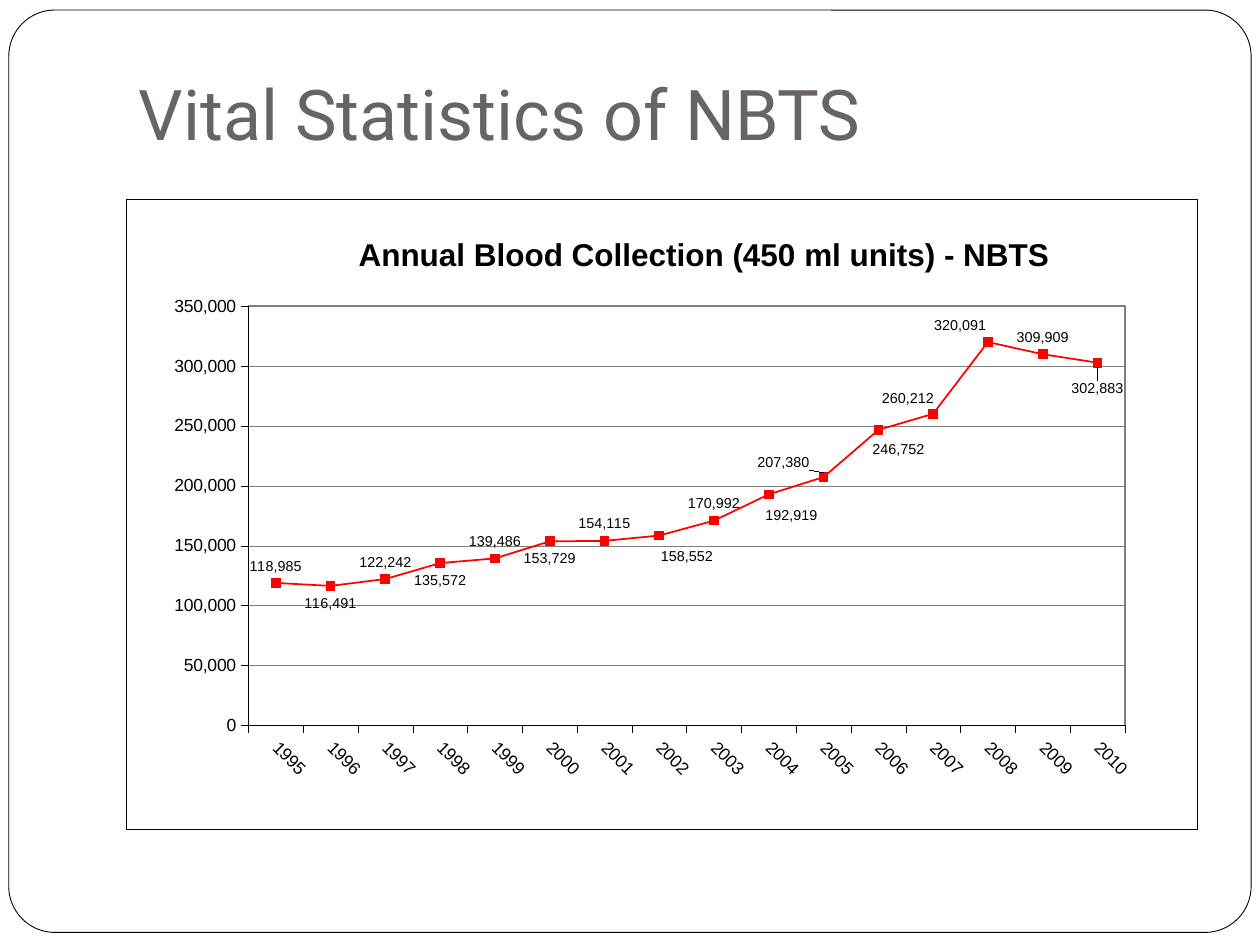
from dataclasses import dataclass

from lxml import etree
from pptx import Presentation
from pptx import util as u
from pptx.chart.data import CategoryChartData
from pptx.dml.color import RGBColor
from pptx.enum import chart as charts, shapes, text
from pptx.oxml import parse_xml
from pptx.oxml.ns import nsdecls, qn

CHART_WIDTH, CHART_HEIGHT = 8.5, 5
BLACK, WHITE, RED, GREY = "000000", "FFFFFF", "FF0000", "808080"
ABOVE = charts.XL_LABEL_POSITION.ABOVE
BELOW = charts.XL_LABEL_POSITION.BELOW
UNITS = [118985, 116491, 122242, 135572, 139486, 153729, 154115, 158552,
         170992, 192919, 207380, 246752, 260212, 320091, 309909, 302883]


@dataclass
class LabelPlacement:
    year: int
    position: charts.XL_LABEL_POSITION
    right: float = 0
    down: float = 0


PLACEMENTS = [
    LabelPlacement(1996, BELOW),
    LabelPlacement(1998, BELOW),
    LabelPlacement(2000, BELOW),
    LabelPlacement(2002, BELOW, 0.22, 0.03),
    LabelPlacement(2004, BELOW, 0.18, 0.03),
    LabelPlacement(2005, ABOVE, -0.32, 0.02),
    LabelPlacement(2006, BELOW, 0.16, 0.02),
    LabelPlacement(2007, ABOVE, -0.2, 0.01),
    LabelPlacement(2008, ABOVE, -0.22),
    LabelPlacement(2010, BELOW, 0, 0.07),
]


def color(value: str) -> RGBColor:
    return RGBColor.from_string(value)


def style_font(font, size: float, value: str = BLACK, name: str = "Arial", bold: bool = False) -> None:
    font.size = u.Pt(size)
    font.name = name
    font.bold = bold
    font.color.rgb = color(value)


def style_line(line, value: str, width: float) -> None:
    line.color.rgb = color(value)
    line.width = u.Pt(width)


def layout_xml(**settings) -> etree._Element:
    children = "".join(f'<c:{key} val="{value}"/>' for key, value in settings.items())
    return parse_xml(f'<c:layout {nsdecls("c")}><c:manualLayout>{children}</c:manualLayout></c:layout>')


def area_xml(line: str, width: float) -> etree._Element:
    return parse_xml(
        f'<c:spPr {nsdecls("c", "a")}><a:solidFill><a:srgbClr val="{WHITE}"/></a:solidFill>'
        f'<a:ln w="{u.Pt(width)}"><a:solidFill><a:srgbClr val="{line}"/></a:solidFill></a:ln></c:spPr>')


def drop_layout(element: etree._Element) -> None:
    for layout in element.findall(qn("c:layout")):
        element.remove(layout)


def add_frame(slide) -> None:
    frame = slide.shapes.add_shape(shapes.MSO_SHAPE.ROUNDED_RECTANGLE, u.Inches(0.07), u.Inches(0.08),
                                   u.Inches(9.86), u.Inches(7.32))
    frame.adjustments[0] = 0.05
    frame.shadow.inherit = False
    frame.fill.solid()
    frame.fill.fore_color.rgb = color(WHITE)
    style_line(frame.line, BLACK, 0.5)
    slide.shapes.title.element.addprevious(frame.element)


def format_title(title) -> None:
    title.left, title.top = u.Inches(1), u.Inches(0.3)
    title.width, title.height = u.Inches(8.5), u.Inches(1.03)
    frame = title.text_frame
    frame.text = "Vital Statistics of NBTS"
    frame.auto_size = text.MSO_AUTO_SIZE.NONE
    frame.vertical_anchor = text.MSO_ANCHOR.BOTTOM
    frame.margin_bottom = u.Inches(0.1)
    paragraph = frame.paragraphs[0]
    paragraph.alignment = text.PP_ALIGN.LEFT
    style_font(paragraph.runs[0].font, 40, "696464", "Roboto")


def format_axes(chart) -> None:
    for axis in (chart.category_axis, chart.value_axis):
        axis.major_tick_mark = charts.XL_TICK_MARK.OUTSIDE
        axis.minor_tick_mark = charts.XL_TICK_MARK.NONE
        style_font(axis.tick_labels.font, 10)
        style_line(axis.format.line, BLACK, 0.25)
    years = chart.element.find(".//" + qn("c:catAx")).find(qn("c:txPr"))
    years.find(qn("a:bodyPr")).set("rot", str(45 * 60000))
    axis = chart.value_axis
    axis.minimum_scale, axis.maximum_scale, axis.major_unit = 0, 350000, 50000
    axis.tick_labels.number_format = "#,##0"
    axis.tick_labels.number_format_is_linked = False
    style_line(axis.major_gridlines.format.line, GREY, 0.25)


def format_series(chart) -> None:
    series = chart.plots[0].series[0]
    series.smooth = False
    style_line(series.format.line, RED, 1)
    marker = series.marker
    marker.style, marker.size = charts.XL_MARKER_STYLE.SQUARE, 5
    marker.format.fill.solid()
    marker.format.fill.fore_color.rgb = color(RED)
    style_line(marker.format.line, RED, 0.75)
    labels = series.data_labels
    labels.show_value = True
    labels.position = ABOVE
    labels.number_format = "#,##0"
    labels.number_format_is_linked = False
    style_font(labels.font, 8.2)
    for placement in PLACEMENTS:
        label = series.points[placement.year - 1995].data_label
        style_font(label.font, 8.2)
        label.position = placement.position
    for element, placement in zip(chart.element.iter(qn("c:dLbl")), PLACEMENTS):
        if placement.right or placement.down:
            element.find(qn("c:idx")).addnext(layout_xml(
                x=placement.right / CHART_WIDTH, y=placement.down / CHART_HEIGHT))


def add_collection_chart(slide) -> None:
    data = CategoryChartData(number_format="#,##0")
    data.categories = [str(year) for year in range(1995, 2011)]
    data.add_series("Series 1", UNITS)
    chart = slide.shapes.add_chart(charts.XL_CHART_TYPE.LINE_MARKERS, u.Inches(1), u.Inches(1.58),
                                   u.Inches(CHART_WIDTH), u.Inches(CHART_HEIGHT), data).chart
    style_font(chart.font, 12)
    chart.has_legend = False
    chart.has_title = True
    title = chart.chart_title
    title.text_frame.text = "Annual Blood Collection (450 ml units) - NBTS"
    style_font(title.text_frame.paragraphs[0].runs[0].font, 18, bold=True)
    title_element = chart.element.find(".//" + qn("c:title"))
    drop_layout(title_element)
    title_element.find(qn("c:tx")).addnext(layout_xml(
        xMode="edge", yMode="edge", x=1.8 / CHART_WIDTH, y=0.23 / CHART_HEIGHT))
    chart.plots[0].vary_by_categories = False
    format_axes(chart)
    format_series(chart)
    plot_area = chart.element.find(".//" + qn("c:plotArea"))
    drop_layout(plot_area)
    plot_area.insert(0, layout_xml(layoutTarget="inner", xMode="edge", yMode="edge",
                                   x=0.97 / CHART_WIDTH, y=0.85 / CHART_HEIGHT,
                                   w=6.96 / CHART_WIDTH, h=3.33 / CHART_HEIGHT))
    plot_area.append(area_xml(GREY, 1))
    chart.element.find(qn("c:chart")).addnext(area_xml(BLACK, 0.25))


def main() -> None:
    presentation = Presentation()
    presentation.slide_width, presentation.slide_height = u.Inches(10), u.Inches(7.5)
    slide = presentation.slides.add_slide(presentation.slide_layouts[5])
    format_title(slide.shapes.title)
    add_frame(slide)
    add_collection_chart(slide)
    presentation.save("out.pptx")


if __name__ == "__main__":
    main()
